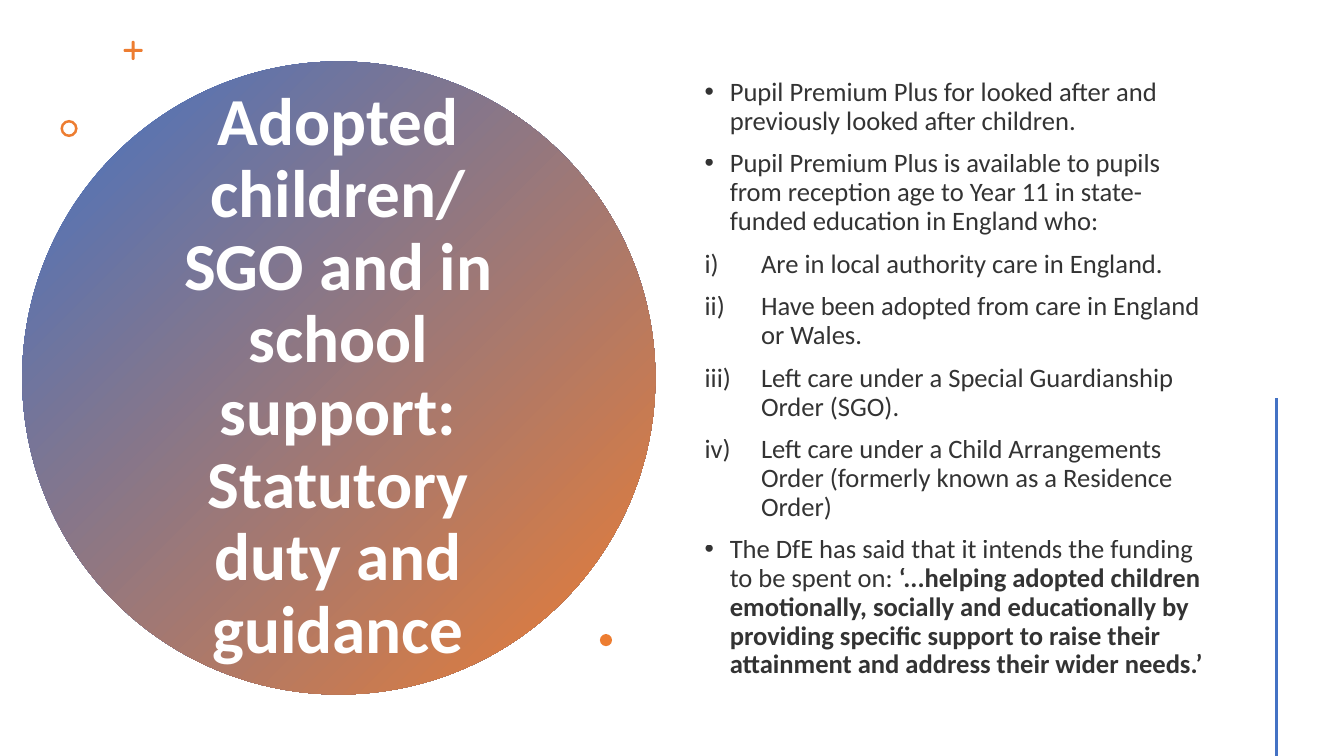
"""Build a slide on Pupil Premium Plus funding for adopted children."""
from math import cos, pi, sin

from lxml import etree
from pptx import Presentation
from pptx.dml.color import RGBColor
from pptx.enum.shapes import MSO_CONNECTOR, MSO_SHAPE
from pptx.enum.text import MSO_ANCHOR, MSO_AUTO_SIZE, PP_ALIGN
from pptx.oxml.ns import qn
from pptx.util import Emu, Inches, Pt

OVAL, DONUT = MSO_SHAPE.OVAL, MSO_SHAPE.DONUT
STRAIGHT = MSO_CONNECTOR.STRAIGHT
MIDDLE, NO_FIT = MSO_ANCHOR.MIDDLE, MSO_AUTO_SIZE.NONE
LEFT, CENTER = PP_ALIGN.LEFT, PP_ALIGN.CENTER

TITLE = "Adopted children/ SGO and in school support: Statutory duty and guidance"
BODY = [
    ("bullet", ["Pupil Premium Plus for looked after and previously looked after children."]),
    ("bullet", ["Pupil Premium Plus is available to pupils from reception age to Year 11 "
                "in state-funded education in England who:"]),
    ("roman", ["Are in local authority care in England."]),
    ("roman", ["Have been adopted from care in England or Wales."]),
    ("roman", ["Left care under a Special Guardianship Order (SGO)."]),
    ("roman", ["Left care under a Child Arrangements Order "
               "(formerly known as a Residence Order)"]),
    ("bullet", ["The DfE has said that it intends the funding to be spent on: ",
                "‘...helping adopted children emotionally, socially and educationally by "
                "providing specific support to raise their attainment and address their "
                "wider needs.’"]),
]
COLORS = {"blue": "4472C4", "orange": "ED7D31", "white": "FFFFFF", "text": "000000"}
FONT = "Calibri"
MARKERS = {
    "bullet": (0.25, "buChar", {"char": "•"}),
    "roman": (0.56, "buAutoNum", {"type": "romanLcParenR"}),
}
WIDTH, HEIGHT = 13.33, 7.5


def rgb(name):
    return RGBColor.from_string(COLORS[name])


def add_mark(p, kind):
    indent, tag, attrs = MARKERS[kind]
    pPr = p._p.get_or_add_pPr()
    pPr.set("marL", str(Inches(indent)))
    pPr.set("indent", str(-Inches(indent)))
    if kind == "bullet":
        etree.SubElement(pPr, qn("a:buFont"), typeface="Arial")
    etree.SubElement(pPr, qn(tag if ":" in tag else "a:" + tag), **attrs)


def add_text(p, runs, size, color, bold=(False,), align=LEFT, before=0, alpha=None):
    p.alignment, p.line_spacing, p.space_before = align, 0.9, Pt(before)
    for text, strong in zip(runs, bold):
        r = p.add_run()
        r.text = text
        r.font.name, r.font.size, r.font.bold = FONT, Pt(size), strong
        r.font.color.rgb = rgb(color)
        if alpha:
            clr = r._r.rPr.find(".//" + qn("a:srgbClr"))
            etree.SubElement(clr, qn("a:alpha"), val=str(alpha * 1000))


def finish(shape):
    shape.shadow.inherit = False
    shape.line.fill.background()
    shape.fill.solid()
    shape.fill.fore_color.rgb = rgb("orange")
    return shape


def add_round(s, preset, left, top, size):
    return finish(s.shapes.add_shape(
        preset, Inches(left), Inches(top), Inches(size), Inches(size)))


def add_plus(s, cx, cy, reach, half):
    points = []
    for arm in range(4):
        turn = arm * pi / 2
        arc = [(reach - half + half * cos(a), half * sin(a))
               for a in (pi * i / 8 for i in range(-4, 5))]
        points += [(Inches(cx + x * cos(turn) - y * sin(turn)),
                    Inches(cy + x * sin(turn) + y * cos(turn)))
                   for x, y in arc + [(half, half)]]
    builder = s.shapes.build_freeform(*points[0])
    builder.add_line_segments(points[1:], close=True)
    return finish(builder.convert_to_shape(Emu(0), Emu(0)))


def set_frame(tf):
    tf.word_wrap, tf.auto_size, tf.vertical_anchor = True, NO_FIT, MIDDLE


def main():
    prs = Presentation()
    prs.slide_width, prs.slide_height = Inches(WIDTH), Inches(HEIGHT)
    s = prs.slides.add_slide(prs.slide_layouts[5])

    disc = add_round(s, OVAL, 0.22, 0.61, 6.28)
    disc.fill.gradient()
    disc.fill.gradient_angle = 315
    for stop, name, place in zip(disc.fill.gradient_stops, ("blue", "orange"), (0, 1)):
        stop.color.rgb, stop.position = rgb(name), place

    title = s.shapes.title
    title.left, title.top = Inches(1.36), Inches(1.41)
    title.width, title.height = Inches(3.99), Inches(4.67)
    set_frame(title.text_frame)
    add_text(title.text_frame.paragraphs[0], [TITLE], 48, "white", (True,), CENTER)
    s.shapes._spTree.append(title._element)

    add_plus(s, 1.32, 0.5, 0.095, 0.015)
    ring = add_round(s, DONUT, 0.6, 1.19, 0.17)
    ring.adjustments[0] = 0.15

    tf = s.shapes.add_textbox(Inches(6.89), Inches(0.57),
                              Inches(5.22), Inches(6.38)).text_frame
    set_frame(tf)
    for i, (kind, runs) in enumerate(BODY):
        p = tf.add_paragraph() if i else tf.paragraphs[0]
        add_mark(p, kind)
        add_text(p, runs, 19, "text", (False, True), before=10 if i else 0, alpha=80)

    add_round(s, OVAL, 5.95, 6.29, 0.12)
    rule = s.shapes.add_connector(STRAIGHT, Inches(0.95 * WIDTH), Inches(3.95),
                                  Inches(0.95 * WIDTH), Inches(HEIGHT))
    rule.line.color.rgb, rule.line.width = rgb("blue"), Pt(2)
    etree.SubElement(rule._element.spPr, qn("a:effectLst"))
    prs.save("out.pptx")


if __name__ == "__main__":
    main()
